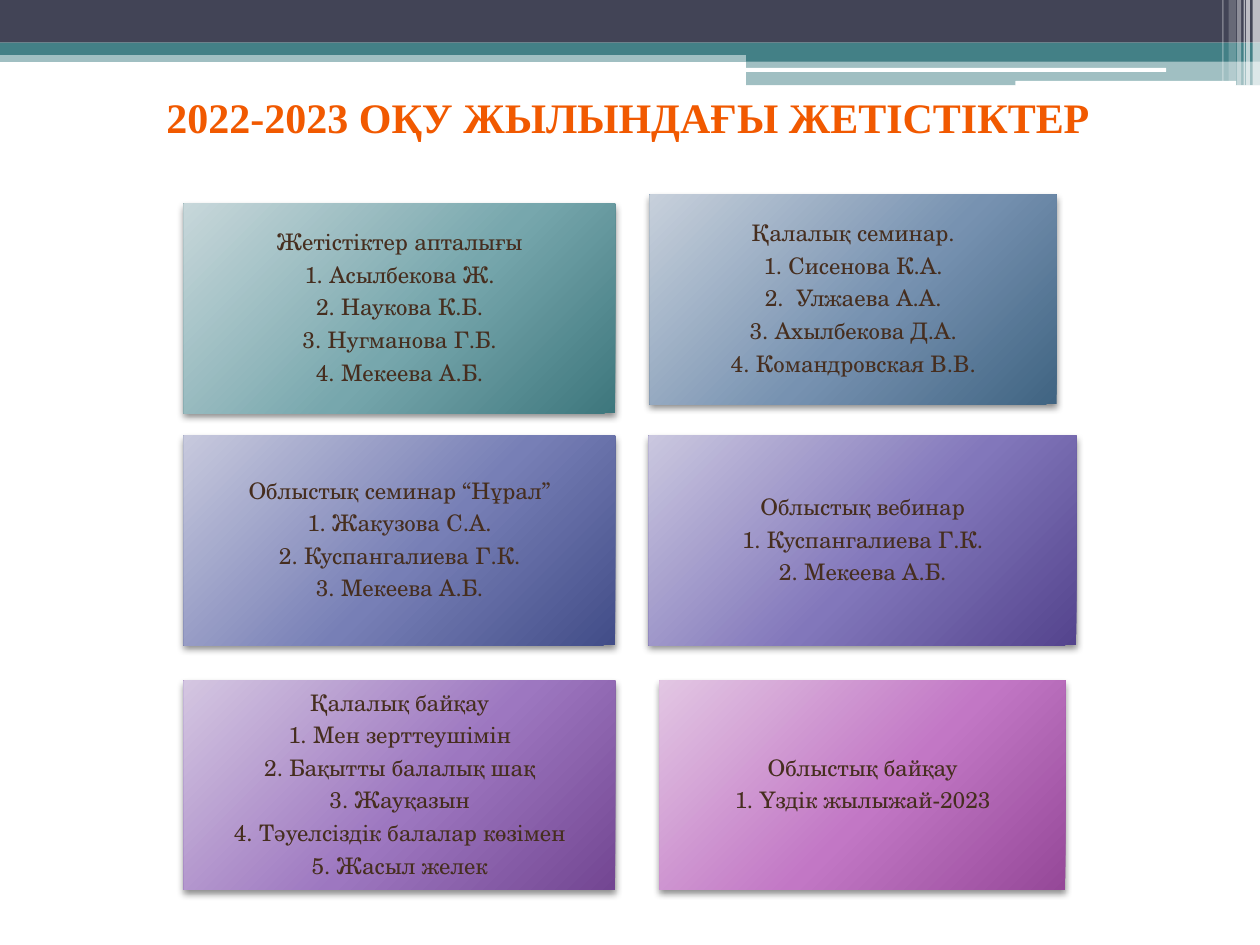
from lxml import etree
from pptx import Presentation
from pptx import util as u
from pptx.dml.color import RGBColor
from pptx.enum import shapes, text
from pptx.oxml.ns import qn

DARK = RGBColor(0x42, 0x44, 0x56)
TEAL = RGBColor(0x43, 0x80, 0x86)
WHITE = RGBColor(0xFF, 0xFF, 0xFF)
ORANGE = RGBColor(0xF1, 0x59, 0x00)
BROWN = RGBColor(0x46, 0x2E, 0x1F)
BLACK = RGBColor(0, 0, 0)

SLIDE_WIDTH, SLIDE_HEIGHT = 25.4, 19.05
LEFT_COLUMN = 3.71
LEFT_WIDTH = 8.69
CARD_HEIGHT = 4.22
CARD_ROWS = 4.11, 8.79, 13.72

CARDS = [
    ((LEFT_COLUMN, CARD_ROWS[0], LEFT_WIDTH, CARD_HEIGHT),
     ("C7D7DA", "77A7AD", "3E777D"),
     ["Жетістіктер апталығы", "1. Асылбекова Ж.", "2. Наукова К.Б.",
      "3. Нугманова Г.Б.", "4. Мекеева А.Б."]),
    ((13.1, 3.93, 8.2, CARD_HEIGHT),
     ("C7D0DB", "7792B1", "406482"),
     ["Қалалық семинар.", "1. Сисенова К.А.", "2.  Улжаева А.А.",
      "3. Ахылбекова Д.А.", "4. Командровская В.В."]),
    ((LEFT_COLUMN, CARD_ROWS[1], LEFT_WIDTH, CARD_HEIGHT),
     ("C7C9DD", "777FB6", "424D88"),
     ["Облыстық семинар “Нұрал”", "1. Жакузова С.А.",
      "2. Куспангалиева Г.К.", "3. Мекеева А.Б."]),
    ((13.08, CARD_ROWS[1], 8.62, CARD_HEIGHT),
     ("CAC7DF", "8277BB", "54448D"),
     ["Облыстық вебинар", "1. Куспангалиева Г.К.", "2. Мекеева А.Б."]),
    ((LEFT_COLUMN, CARD_ROWS[2], LEFT_WIDTH, CARD_HEIGHT),
     ("D4C6E1", "9D77C0", "734692"),
     ["Қалалық байқау", "1. Мен зерттеушімін", "2. Бақытты балалық шақ",
      "3. Жауқазын", "4. Тәуелсіздік балалар көзімен", "5. Жасыл желек"]),
    ((13.3, CARD_ROWS[2], 8.18, CARD_HEIGHT),
     ("E2C6E3", "C277C5", "954898"),
     ["Облыстық байқау", "1. Үздік жылыжай-2023"]),
]


def add_element(parent, tag, **attributes):
    """Append a drawing element with the given attributes."""
    values = {key: str(value) for key, value in attributes.items()}
    return etree.SubElement(parent, qn(tag), values)


def add_color(parent, color, alpha=100):
    """Append a colour with its opacity in percent."""
    srgb = add_element(parent, "a:srgbClr", val=color)
    if alpha < 100:
        add_element(srgb, "a:alpha", val=alpha * 1000)


def add_block(slide, box, color=None, alpha=100, rounded=False):
    """Place a rectangle without line or shadow, filled if a colour is given."""
    kind = shapes.MSO_SHAPE.ROUNDED_RECTANGLE if rounded else shapes.MSO_SHAPE.RECTANGLE
    block = slide.shapes.add_shape(kind, *map(u.Cm, box))
    block.shadow.inherit = False
    block.line.fill.background()
    if color is not None:
        fill = etree.Element(qn("a:solidFill"))
        add_color(fill, color, alpha)
        set_fill(block, fill)
    return block


def set_fill(block, fill):
    """Put a fill element in its place before the line of a block."""
    block._element.spPr.find(qn("a:ln")).addprevious(fill)


def add_radial_gradient(block, colors):
    """Fill a block with rings centred beyond its top left corner."""
    gradient = etree.Element(qn("a:gradFill"), rotWithShape="1")
    stops = add_element(gradient, "a:gsLst")
    for position, color in zip((0, 55, 100), colors):
        add_color(add_element(stops, "a:gs", pos=position * 1000), color)
    rings = add_element(gradient, "a:path", path="circle")
    add_element(rings, "a:fillToRect", l=-40000, t=-90000, r=140000, b=190000)
    set_fill(block, gradient)


def add_soft_shadow(block):
    """Give a block a soft shadow straight below it."""
    effects = block._element.spPr.find(qn("a:effectLst"))
    shadow = add_element(effects, "a:outerShdw", blurRad=u.Pt(4), dist=u.Pt(2),
                         dir=5400000, rotWithShape=0)
    add_color(shadow, BLACK, 45)


def write_text(frame, lines, font, size, color, bold=False, spacing=1.0, after=0,
               anchor=text.MSO_ANCHOR.TOP):
    """Write centred lines into a text frame."""
    frame.word_wrap = True
    frame.vertical_anchor = anchor
    for index, line in enumerate(lines):
        paragraph = frame.paragraphs[0] if index == 0 else frame.add_paragraph()
        paragraph.alignment = text.PP_ALIGN.CENTER
        paragraph.line_spacing = spacing
        paragraph.space_after = u.Pt(after)
        run = paragraph.add_run()
        run.text = line
        run.font.name = font
        run.font.size = u.Pt(size)
        run.font.bold = bold
        run.font.color.rgb = color


def add_header(slide, box):
    """Place the bands, the white lines and the stripes at the right edge."""
    left, top, width, height = box
    right = left + width
    step = left + 15.04
    for x, y, band_height, color, alpha in [
        (left, 1.02, 0.23, TEAL, 50),
        (left, 0, 0.86, DARK, 100),
        (left, 0.86, 0.25, TEAL, 100),
        (step, 0.99, 0.25, TEAL, 100),
        (step, 1.22, 0.5, TEAL, 50),
    ]:
        add_block(slide, (x, top + y, right - x, band_height), color, alpha)
    for x, y, line_width, line_height in [(15.01, 1.37, 8.5, 0.08),
                                          (20.47, 1.63, 4.45, 0.1)]:
        add_block(slide, (left + x, top + y, line_width, line_height), WHITE, rounded=True)
    for offset, stripe_width, stripe_height, alpha in [
        (0.15, 0.15, height, 65),
        (0.28, 0.08, height, 65),
        (0.33, 0.03, height, 60),
        (0.46, 0.08, height, 40),
        (0.63, 0.15, height - 0.1, 20),
        (0.76, 0.03, height - 0.1, 30),
    ]:
        add_block(slide, (right - offset, top, stripe_width, stripe_height), WHITE, alpha)


def add_title(slide, box, title):
    """Place the slide title."""
    frame = slide.shapes.add_textbox(*map(u.Cm, box)).text_frame
    write_text(frame, [title], "Times New Roman", 24, ORANGE, bold=True)


def add_card(slide, box, colors, lines):
    """Place one card of achievements."""
    card = add_block(slide, box)
    add_radial_gradient(card, colors)
    add_soft_shadow(card)
    frame = card.text_frame
    frame.margin_left = frame.margin_right = u.Cm(0.13)
    frame.margin_top = frame.margin_bottom = u.Cm(0.13)
    write_text(frame, lines, "TeX Gyre Schola", 13, BROWN, spacing=0.9, after=4.55,
               anchor=text.MSO_ANCHOR.MIDDLE)


def main():
    """Build the slide and save it."""
    presentation = Presentation()
    presentation.slide_width = u.Cm(SLIDE_WIDTH)
    presentation.slide_height = u.Cm(SLIDE_HEIGHT)
    slide = presentation.slides.add_slide(presentation.slide_layouts[6])
    add_header(slide, (0, 0, SLIDE_WIDTH, 1.73))
    add_title(slide, (0.71, 1.73, 23.9, 1.28), "2022-2023 ОҚУ ЖЫЛЫНДАҒЫ ЖЕТІСТІКТЕР")
    for box, colors, lines in CARDS:
        add_card(slide, box, colors, lines)
    presentation.save("out.pptx")


if __name__ == "__main__":
    main()
